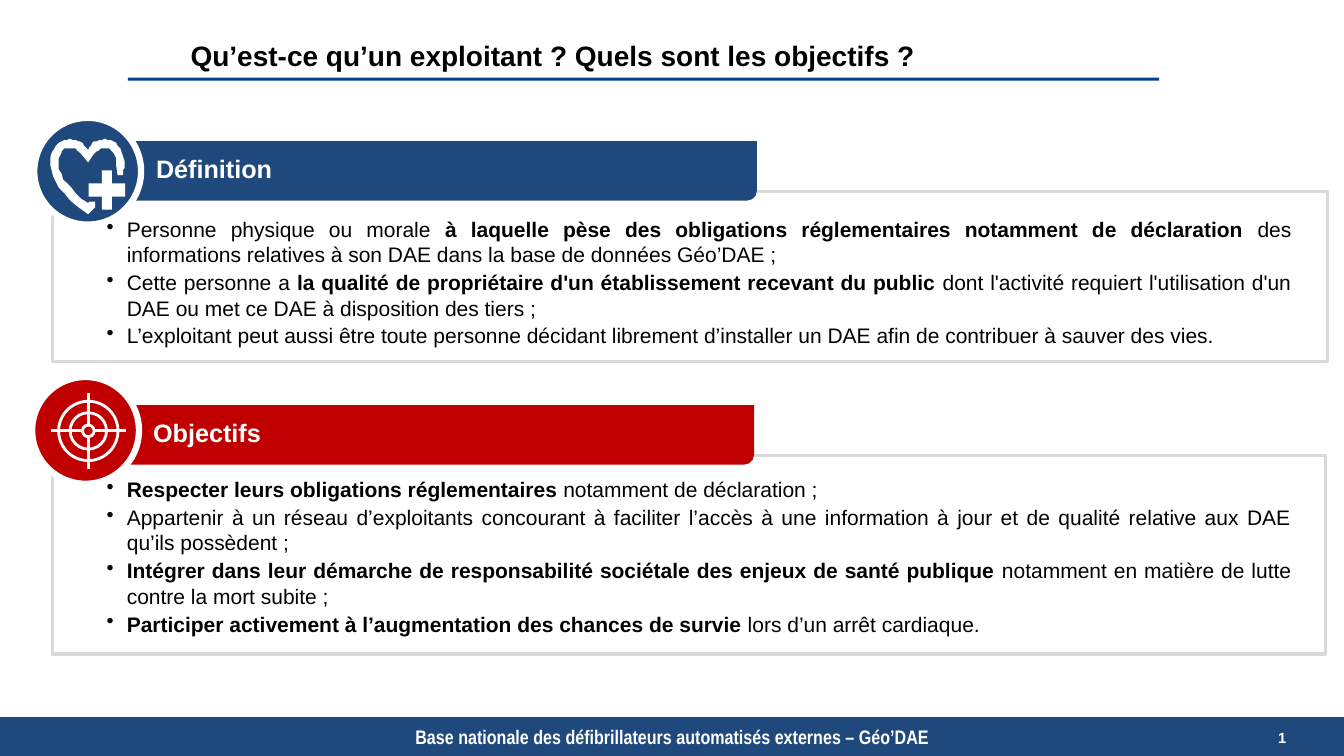
"""Build the slide that defines a defibrillator operator and lists the objectives."""
import pptx
import pptx.util
import pptx.dml.color
import pptx.enum.shapes
import pptx.enum.text
import pptx.oxml.ns
import lxml.etree

Pt = pptx.util.Pt
RGBColor = pptx.dml.color.RGBColor
SHAPE = pptx.enum.shapes.MSO_SHAPE
ALIGN = pptx.enum.text.PP_ALIGN
MIDDLE = pptx.enum.text.MSO_ANCHOR.MIDDLE
qn = pptx.oxml.ns.qn

NAVY = RGBColor(0x1F, 0x49, 0x7D)
RULE_BLUE = RGBColor(0x00, 0x41, 0x92)
RED = RGBColor(0xC0, 0x00, 0x00)
GRAY = RGBColor(0xD9, 0xD9, 0xD9)
WHITE = RGBColor(0xFF, 0xFF, 0xFF)
BLACK = RGBColor(0x00, 0x00, 0x00)

TITLE = "Qu’est-ce qu’un exploitant ? Quels sont les objectifs ?"
FOOTER = "Base nationale des défibrillateurs automatisés externes – Géo’DAE"
PAGE_NUMBER = "2"

DEFINITION = [
    [("Personne physique ou morale ", False),
     ("à laquelle pèse des obligations réglementaires notamment de déclaration ", True),
     ("des informations relatives à son DAE dans la base de données Géo’DAE ;", False)],
    [("Cette personne a ", False),
     ("la qualité de propriétaire d'un établissement recevant du public ", True),
     ("dont l'activité requiert l'utilisation d'un DAE ou met ce DAE à disposition des tiers ;", False)],
    [("L’exploitant peut aussi être toute personne décidant librement d’installer un DAE "
      "afin de contribuer à sauver des vies.", False)],
]
OBJECTIVES = [
    [("Respecter leurs obligations réglementaires ", True),
     ("notamment de déclaration ;", False)],
    [("Appartenir à un réseau d’exploitants concourant à faciliter l’accès à une information "
      "à jour et de qualité relative aux DAE qu’ils possèdent ;", False)],
    [("Intégrer dans leur démarche de responsabilité sociétale des enjeux de santé publique ", True),
     ("notamment en matière de lutte contre la mort subite ;", False)],
    [("Participer activement à l’augmentation des chances de survie ", True),
     ("lors d’un arrêt cardiaque.", False)],
]
SECTIONS = [
    dict(name="Définition", color=NAVY, items=DEFINITION, frame=(37.4, 136.8, 910.8, 121.7),
         header=(87.1, 100.8), circle=(24.5, 84.2), body=(151.2, 102.2)),
    dict(name="Objectifs", color=RED, items=OBJECTIVES, frame=(37.4, 325.4, 909.4, 141.8),
         header=(85, 289.4), circle=(23, 269.3), body=(337, 122.4)),
]

HEART = [
    [(62.6, 145.4)], [(49.7, 135.4), (42.5, 126), (41.8, 118.1)], [(41.8, 115.2)],
    [(42.5, 108.7), (46.1, 105.8), (48.2, 105.8)], [(50.4, 105.8)],
    [(54, 105.8), (55.4, 107.3), (58.3, 110.2)], [(62.6, 115.9)], [(67, 110.2)],
    [(69.8, 107.3), (71.3, 105.8), (74.9, 105.8)], [(76.3, 105.8)],
    [(78.5, 105.8), (82.8, 108.7), (82.8, 115.2)], [(82.8, 118.1)], [(83.5, 124.6)],
    [(87.8, 124.6)], [(88.6, 122.4), (88.6, 120.2), (88.6, 118.1)], [(88.6, 115.2)],
    [(87.8, 105.1), (82.1, 100.1), (77, 100.1)], [(74.9, 99.4)],
    [(68.4, 99.4), (65.5, 102.2), (62.6, 106.6)],
    [(59, 102.2), (56.2, 99.4), (50.4, 99.4)], [(48.2, 100.1)],
    [(42.5, 100.1), (36.7, 105.1), (36, 115.2)], [(36, 118.1)],
    [(36.7, 127.4), (43.2, 139), (62.6, 153.4)], [(68.4, 148.3)], [(68.4, 144)], [(64.1, 144)],
]
TARGET_CENTER = (63.1, 307.8)
TARGET_RADII = (21.2, 13, 4.2)
TARGET_REACH = 27


def paint(shape, fill, line=None, width=0):
    shape.shadow.inherit = False
    if fill is None:
        shape.fill.background()
    else:
        shape.fill.solid()
        shape.fill.fore_color.rgb = fill
    if line is None:
        shape.line.fill.background()
    else:
        shape.line.color.rgb = line
        shape.line.width = Pt(width)
    return shape


def add_shape(page, kind, place, fill, line=None, width=0):
    shape = page.shapes.add_shape(kind, *[Pt(length) for length in place])
    return paint(shape, fill, line, width)


def add_box(page, place):
    box = page.shapes.add_textbox(*[Pt(length) for length in place])
    box.text_frame.word_wrap = True
    return box


def set_margins(frame, left=0, top=0, right=0, bottom=0):
    frame.margin_left, frame.margin_top = Pt(left), Pt(top)
    frame.margin_right, frame.margin_bottom = Pt(right), Pt(bottom)


def style(font, size, color, bold=True, name="Arial"):
    font.name, font.size, font.bold = name, Pt(size), bold
    font.color.rgb = color


def write(frame, text, align, size, color, name="Arial"):
    frame.text = text
    frame.word_wrap = True
    frame.vertical_anchor = MIDDLE
    frame.paragraphs[0].alignment = align
    style(frame.paragraphs[0].runs[0].font, size, color, name=name)


def add_bullets(page, place, items):
    frame = add_box(page, place).text_frame
    for index, spans in enumerate(items):
        para = frame.add_paragraph() if index else frame.paragraphs[0]
        para.alignment = ALIGN.JUSTIFY
        para.space_before, para.space_after = Pt(1 if index else 0), Pt(1)
        properties = para._p.get_or_add_pPr()
        properties.set("marL", str(Pt(14.4)))
        properties.set("indent", str(-Pt(14.4)))
        lxml.etree.SubElement(properties, qn("a:buChar")).set("char", "•")
        for text, bold in spans:
            span = para.add_run()
            span.text = text
            style(span.font, 15, BLACK, bold)


def curve_points(segments, steps=8):
    points = list(segments[0])
    for segment in segments[1:]:
        if len(segment) == 1:
            points.append(segment[0])
            continue
        corners = [points[-1], *segment]
        for step in range(1, steps + 1):
            t = step / steps
            weights = ((1 - t) ** 3, 3 * t * (1 - t) ** 2, 3 * t * t * (1 - t), t ** 3)
            points.append(tuple(sum(w * corner[axis] for w, corner in zip(weights, corners))
                                for axis in (0, 1)))
    return points


def add_heart(page):
    points = curve_points(HEART)
    builder = page.shapes.build_freeform(*points[0], scale=Pt(1))
    builder.add_line_segments(points[1:], close=True)
    paint(builder.convert_to_shape(), WHITE)
    cross = add_shape(page, SHAPE.CROSS, (63.4, 121.7, 25.9, 28.1), WHITE)
    cross.adjustments[0] = 0.36


def add_target(page):
    x, y = TARGET_CENTER
    for radius in TARGET_RADII:
        add_shape(page, SHAPE.OVAL, (x - radius, y - radius, 2 * radius, 2 * radius), None, WHITE, 2)
    for dx, dy in ((1, 0), (-1, 0), (0, 1), (0, -1)):
        ends = [x + dx * TARGET_RADII[-1], y + dy * TARGET_RADII[-1],
                x + dx * TARGET_REACH, y + dy * TARGET_REACH]
        hair = page.shapes.add_connector(pptx.enum.shapes.MSO_CONNECTOR.STRAIGHT,
                                         *[Pt(end) for end in ends])
        hair.line.color.rgb = WHITE
        hair.line.width = Pt(2)
        lxml.etree.SubElement(hair._element.spPr, qn("a:effectLst"))


def add_section(page, section):
    add_shape(page, SHAPE.RECTANGLE, section["frame"], WHITE, GRAY, 2.25)
    header = add_shape(page, SHAPE.ROUND_2_DIAG_RECTANGLE,
                       (*section["header"], 453.6, 42.5), section["color"])
    write(header.text_frame, section["name"], ALIGN.LEFT, 18, WHITE)
    set_margins(header.text_frame, left=22.3, bottom=2.9)
    add_shape(page, SHAPE.OVAL, (*section["circle"], 76.3, 76.3), section["color"], WHITE, 4.5)
    top, height = section["body"]
    add_bullets(page, (69.1, top, 860.4, height), section["items"])


def add_footer(page):
    add_shape(page, SHAPE.RECTANGLE, (0, 512.3, 960, 27.7), NAVY)
    label = add_box(page, (211, 518.4, 538.6, 15.8)).text_frame
    set_margins(label)
    write(label, FOOTER, ALIGN.CENTER, 14, WHITE, "Arial Narrow")
    number = add_box(page, (776.9, 512.6, 141.8, 28.1)).text_frame
    set_margins(number)
    write(number, PAGE_NUMBER, ALIGN.RIGHT, 10.5, WHITE)
    span = number.paragraphs[0].runs[0]._r
    span.tag = qn("a:fld")
    span.set("id", "{B6F15528-21DE-4FAA-801E-634DDDAF4B2B}")
    span.set("type", "slidenum")


def main():
    deck = pptx.Presentation()
    deck.slide_width, deck.slide_height = Pt(960), Pt(540)
    page = deck.slides.add_slide(deck.slide_layouts[5])
    title = page.shapes.title
    title.left, title.top, title.width, title.height = Pt(128.9), Pt(23.8), Pt(653.8), Pt(31)
    write(title.text_frame, TITLE, ALIGN.LEFT, 20, BLACK)
    title.text_frame.auto_size = pptx.enum.text.MSO_AUTO_SIZE.NONE
    add_shape(page, SHAPE.RECTANGLE, (91.4, 55.4, 736.6, 2.2), RULE_BLUE)
    add_footer(page)
    for section in SECTIONS:
        add_section(page, section)
    add_heart(page)
    add_target(page)
    deck.save("out.pptx")


if __name__ == "__main__":
    main()
